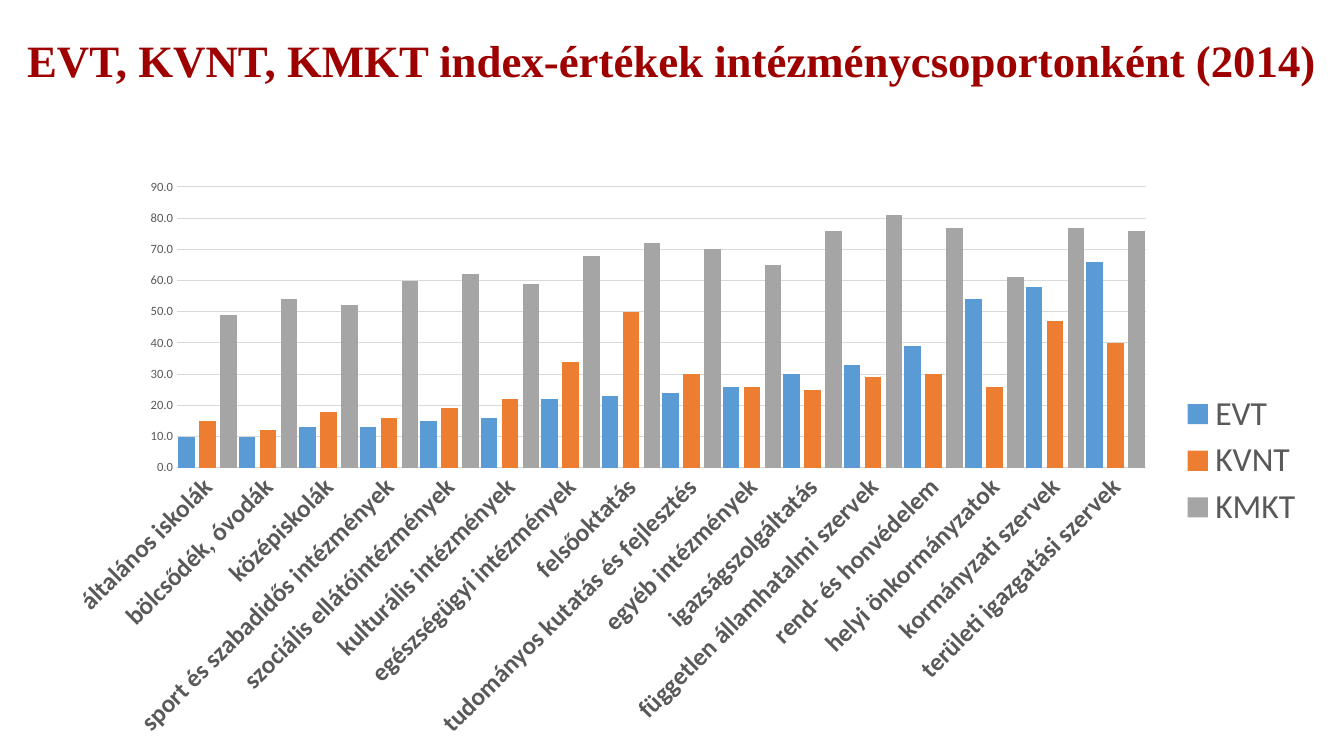
from lxml import etree
from pptx import Presentation, util as u
from pptx.chart.data import CategoryChartData
from pptx.dml.color import RGBColor
from pptx.enum import chart as ch, text
from pptx.oxml.ns import qn

TITLE = "EVT, KVNT, KMKT index-értékek intézménycsoportonként (2014)"
INDEXES = {"EVT": "5B9BD5", "KVNT": "ED7D31", "KMKT": "A5A5A5"}
INSTITUTIONS = [
    ("általános iskolák", 10, 15, 49),
    ("bölcsődék, óvodák", 10, 12, 54),
    ("középiskolák", 13, 18, 52),
    ("sport és szabadidős intézmények", 13, 16, 60),
    ("szociális ellátóintézmények", 15, 19, 62),
    ("kulturális intézmények", 16, 22, 59),
    ("egészségügyi intézmények", 22, 34, 68),
    ("felsőoktatás", 23, 50, 72),
    ("tudományos kutatás és fejlesztés", 24, 30, 70),
    ("egyéb intézmények", 26, 26, 65),
    ("igazságszolgáltatás", 30, 25, 76),
    ("független államhatalmi szervek", 33, 29, 81),
    ("rend- és honvédelem", 39, 30, 77),
    ("helyi önkormányzatok", 54, 26, 61),
    ("kormányzati szervek", 58, 47, 77),
    ("területi igazgatási szervek", 66, 40, 76),
]
GREY, LINE = "595959", "D9D9D9"
# Shares of the chart frame: left, top, width, height
PLOT = (0.102, 0.032, 0.768, 0.482)
LEGEND = (0.896, 0.377, 0.1, 0.25)


def rgb(value):
    return RGBColor.from_string(value)


def style(font, size, color=GREY, name="Calibri", bold=False):
    font.size, font.name, font.bold = u.Pt(size), name, bold
    font.color.rgb = rgb(color)


def write(tf, words, align=text.PP_ALIGN.CENTER, **font):
    p = tf.paragraphs[0]
    p.alignment = align
    r = p.add_run()
    r.text = words
    style(r.font, **font)


def rule(line):
    line.color.rgb = rgb(LINE)
    line.width = u.Pt(0.75)


def place(part, box, inner=False):
    """Fix a chart part at the given shares of the chart frame."""
    for old in part.findall(qn("c:layout")):
        part.remove(old)
    layout = etree.Element(qn("c:layout"))
    manual = etree.SubElement(layout, qn("c:manualLayout"))
    settings = [("layoutTarget", "inner")] if inner else []
    settings += [("xMode", "edge"), ("yMode", "edge"), *zip("xywh", box)]
    for tag, value in settings:
        etree.SubElement(manual, qn("c:" + tag)).set("val", str(value))
    if inner:
        part.insert(0, layout)
    else:
        part.find(qn("c:legendPos")).addnext(layout)


prs = Presentation()
prs.slide_width, prs.slide_height = u.Inches(13.33), u.Inches(7.5)
s = prs.slides.add_slide(prs.slide_layouts[5])

# Title
title = s.shapes.title
title.left, title.top = 0, u.Inches(0.27)
title.width, title.height = prs.slide_width, u.Inches(1.4)
tf = title.text_frame
tf.word_wrap = True
tf.auto_size = text.MSO_AUTO_SIZE.NONE
tf.vertical_anchor = text.MSO_ANCHOR.TOP
write(tf, TITLE, size=32, color="9E0000", name="Times New Roman", bold=True)

# Clustered columns
names, *columns = zip(*INSTITUTIONS)
data = CategoryChartData(number_format="0.0")
data.categories = names
for index, values in zip(INDEXES, columns):
    data.add_series(index, values)
chart = s.shapes.add_chart(
    ch.XL_CHART_TYPE.COLUMN_CLUSTERED, u.Inches(0.48), u.Inches(1.67),
    u.Inches(12.51), u.Inches(5.78), data).chart
chart.has_title = False
style(chart.font, 10, "000000")
plot = chart.plots[0]
plot.gap_width, plot.overlap, plot.vary_by_categories = 12, -27, False
for series, color in zip(plot.series, INDEXES.values()):
    series.format.fill.solid()
    series.format.fill.fore_color.rgb = rgb(color)
    series.invert_if_negative = False

# Axes
cat, val = chart.category_axis, chart.value_axis
for axis, size, bold in ((cat, 18, True), (val, 9, False)):
    axis.major_tick_mark = axis.minor_tick_mark = ch.XL_TICK_MARK.NONE
    style(axis.tick_labels.font, size, bold=bold)
rule(cat.format.line)
cat._element.find(qn("c:txPr")).find(qn("a:bodyPr")).set("rot", "-2700000")
val.minimum_scale, val.maximum_scale, val.major_unit = 0, 90, 10
val.tick_labels.number_format = "0.0"
val.tick_labels.number_format_is_linked = False
val.format.line.fill.background()
val.has_major_gridlines = True
rule(val.major_gridlines.format.line)

# Legend and layout
chart.has_legend = True
chart.legend.position = ch.XL_LEGEND_POSITION.RIGHT
chart.legend.include_in_layout = False
style(chart.legend.font, 24)
place(chart._chartSpace.chart.plotArea, PLOT, inner=True)
place(chart.legend._element, LEGEND)

prs.save("out.pptx")
